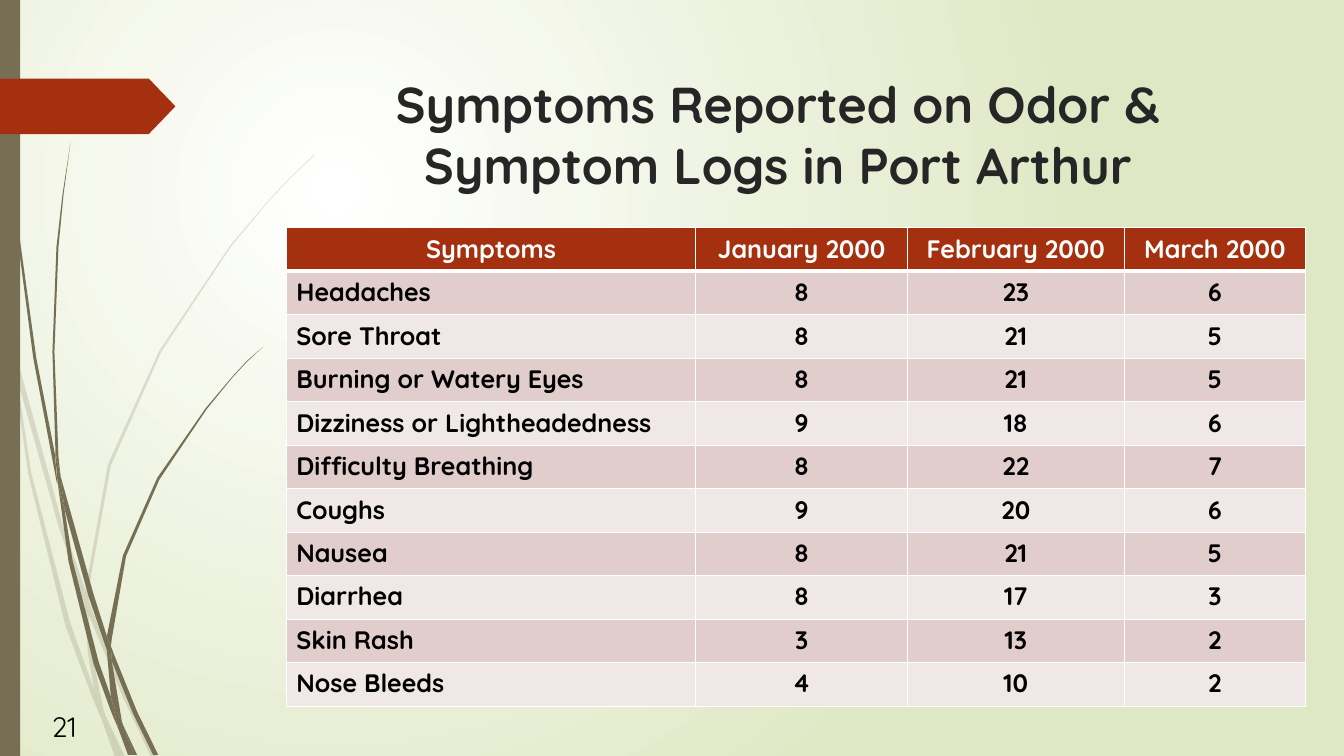
from lxml import etree
from pptx import Presentation
from pptx.dml.color import RGBColor
from pptx.enum.shapes import MSO_SHAPE
from pptx.enum.text import MSO_ANCHOR, PP_ALIGN
from pptx.oxml import parse_xml
from pptx.oxml.ns import nsdecls, qn
from pptx.util import Inches, Pt

RECTANGLE, PENTAGON = MSO_SHAPE.RECTANGLE, MSO_SHAPE.PENTAGON
TOP, MIDDLE = MSO_ANCHOR.TOP, MSO_ANCHOR.MIDDLE
LEFT, CENTER, RIGHT = PP_ALIGN.LEFT, PP_ALIGN.CENTER, PP_ALIGN.RIGHT

FONT = "Quicksand"
COLORS = {
    "glow": "FFFFFF", "meadow": "DFE8C4", "grass": "766F54", "accent": "A53010",
    "title": "262626", "text": "000000", "white": "FFFFFF",
    "band_dark": "E1CDCC", "band_light": "F0E8E7",
}

# Each blade section is an outline of (x, y) corners in inches.
PALE_GRASS = [
    [(.11, 3.5), (.09, 3.22), (0, 2.82), (0, 2.99), (.1, 3.44)],
    [(.58, 5.22), (.84, 5.99), (.85, 5.86), (.62, 5.2), (.14, 3.45), (.17, 3.76)],
    [(.92, 6.07), (.88, 5.96), (.88, 6.1), (1.23, 6.94), (1.5, 7.51), (1.55, 7.51),
     (1.27, 6.92)],
    [(1.19, 7.51), (1.24, 7.51), (1.05, 7.11)],
    [(.93, 6.83), (.7, 6.19), (.31, 4.69), (.17, 3.76), (.11, 3.5), (.28, 4.7),
     (.65, 6.21), (.92, 6.93), (1.01, 7.14), (.99, 7.07)],
    [(.84, 5.99), (.87, 6.46), (.93, 6.83), (.96, 6.92), (1.05, 7.11), (1.03, 7.06),
     (.91, 6.46), (.88, 6.1), (.88, 6.08)],
    [(.88, 5.84), (1.1, 4.62), (1.6, 3.49), (2.29, 2.45), (2.68, 1.98), (2.9, 1.75),
     (3.12, 1.54), (3.12, 1.53), (2.89, 1.75), (2.68, 1.97), (2.28, 2.44), (1.58, 3.48),
     (1.07, 4.61), (.85, 5.84), (.85, 5.86), (.88, 5.96)],
    [(1.01, 7.14), (1.14, 7.51), (1.19, 7.51)],
    [(.88, 6.08), (.88, 6.1), (.88, 5.96), (.85, 5.86), (.84, 5.99)],
    [(.96, 6.92), (.93, 6.83), (.99, 7.07), (1.01, 7.14), (1.19, 7.51), (1.05, 7.11)],
]
DARK_GRASS = [
    [(.07, 1.1), (.17, 2.33), (.33, 3.55), (.56, 4.77), (.57, 4.81), (.55, 4.57),
     (.55, 4.53), (.36, 3.55), (.19, 2.32), (.08, 1.09), (.05, .48), (.04, 0), (.03, 0),
     (.04, .48)],
    [(.88, 5.92), (1.06, 6.45), (1.06, 6.31), (.93, 5.9), (.6, 4.72), (.64, 5.05)],
    [(1.13, 6.49), (1.1, 6.41), (1.11, 6.56), (1.32, 7.08), (1.52, 7.49), (1.57, 7.49),
     (1.36, 7.06)],
    [(1.1, 6.91), (.98, 6.57), (.72, 5.56), (.64, 5.05), (.57, 4.77), (.68, 5.57),
     (.93, 6.59), (1.11, 7.08), (1.17, 7.22), (1.16, 7.17)],
    [(.6, 4.72), (.58, 4.53), (.54, 3.49), (.58, 2.45), (.63, 1.93), (.7, 1.41),
     (.62, 1.93), (.56, 2.45), (.52, 3.49), (.55, 4.49)],
    [(1.33, 7.49), (1.36, 7.49), (1.22, 7.19)],
    [(.57, 4.77), (.64, 5.05), (.6, 4.72), (.55, 4.49), (.55, 4.53)],
    [(1.11, 6.33), (1.25, 5.52), (1.58, 4.76), (2.05, 4.06), (2.31, 3.74), (2.45, 3.59),
     (2.61, 3.44), (2.45, 3.58), (2.31, 3.73), (2.04, 4.05), (1.56, 4.74), (1.22, 5.51),
     (1.06, 6.31), (1.1, 6.41)],
    [(1.17, 7.22), (1.27, 7.49), (1.31, 7.49)],
    [(1.06, 6.45), (1.1, 6.91), (1.16, 7.06), (1.22, 7.19), (1.21, 7.16), (1.11, 6.56),
     (1.09, 6.51)],
    [(1.06, 6.45), (1.09, 6.51), (1.11, 6.56), (1.1, 6.41), (1.06, 6.31)],
    [(1.16, 7.06), (1.1, 6.91), (1.16, 7.17), (1.17, 7.22), (1.3, 7.49), (1.33, 7.49),
     (1.22, 7.19)],
]

COLUMN_WIDTHS = [4.06, 2.1, 2.15, 1.8]
HEADINGS = ["Symptoms", "January 2000", "February 2000", "March 2000"]
REPORTS = [
    ("Headaches", 8, 23, 6),
    ("Sore Throat", 8, 21, 5),
    ("Burning or Watery Eyes", 8, 21, 5),
    ("Dizziness or Lightheadedness", 9, 18, 6),
    ("Difficulty Breathing", 8, 22, 7),
    ("Coughs", 9, 20, 6),
    ("Nausea", 8, 21, 5),
    ("Diarrhea", 8, 17, 3),
    ("Skin Rash", 3, 13, 2),
    ("Nose Bleeds", 4, 10, 2),
]


def rgb(name):
    return RGBColor.from_string(COLORS[name])


def paint(shape, color):
    shape.shadow.inherit = False
    shape.fill.solid()
    shape.fill.fore_color.rgb = rgb(color)
    shape.line.fill.background()


def write(frame, text, size, color, align, bold=False):
    frame.text = text
    para = frame.paragraphs[0]
    para.alignment = align
    font = para.runs[0].font
    font.name, font.size, font.bold = FONT, Pt(size), bold
    font.color.rgb = rgb(color)


def add_text(page, box, text, size, color, align, anchor, bold=False):
    frame = page.shapes.add_textbox(*map(Inches, box)).text_frame
    frame.word_wrap = True
    frame.vertical_anchor = anchor
    write(frame, text, size, color, align, bold)


def add_background(page):
    """Fill the page with a round glow centred in its upper left quarter."""
    stops = "".join(
        f'<a:gs pos="{position}"><a:srgbClr val="{COLORS[name]}"/></a:gs>'
        for position, name in ((0, "glow"), (100000, "meadow")))
    page.background.fill.solid()
    properties = page.element.cSld.find(qn("p:bg")).find(qn("p:bgPr"))
    properties.replace(properties[0], parse_xml(
        f'<a:gradFill {nsdecls("a")} rotWithShape="1"><a:gsLst>{stops}</a:gsLst>'
        '<a:path path="circle"><a:fillToRect l="50000" t="50000" r="100000" b="100000"/>'
        '</a:path></a:gradFill>'))


def add_grass(page, sections, opacity):
    group = page.shapes.add_group_shape()
    for section in sections:
        corners = [(Inches(x), Inches(y)) for x, y in section]
        builder = group.shapes.build_freeform(*corners[0])
        builder.add_line_segments(corners[1:], close=True)
        blade = builder.convert_to_shape()
        paint(blade, "grass")
        if opacity < 100:
            for color in blade.element.spPr.find(qn("a:solidFill")):
                etree.SubElement(color, qn("a:alpha"), val=str(opacity * 1000))


def add_side_decor(page, bar_box, arrow_box):
    add_grass(page, PALE_GRASS, 20)
    add_grass(page, DARK_GRASS, 100)
    paint(page.shapes.add_shape(RECTANGLE, *map(Inches, bar_box)), "grass")
    arrow = page.shapes.add_shape(PENTAGON, *map(Inches, arrow_box))
    arrow.adjustments[0] = 0.48
    paint(arrow, "accent")


def add_borders(cell, bottom_width):
    properties = cell._tc.get_or_add_tcPr()
    widths = {"lnL": 1, "lnR": 1, "lnT": 1, "lnB": bottom_width}
    for index, (side, width) in enumerate(widths.items()):
        properties.insert(index, parse_xml(
            f'<a:{side} {nsdecls("a")} w="{Pt(width)}"><a:solidFill>'
            f'<a:srgbClr val="{COLORS["white"]}"/></a:solidFill></a:{side}>'))


def add_symptom_table(page, box):
    rows = [HEADINGS, *REPORTS]
    table = page.shapes.add_table(len(rows), len(HEADINGS), *map(Inches, box)).table
    for column, width in zip(table.columns, COLUMN_WIDTHS):
        column.width = Inches(width)
    for row_index, values in enumerate(rows):
        is_header = row_index == 0
        band = "band_dark" if row_index % 2 else "band_light"
        for column_index, value in enumerate(values):
            cell = table.cell(row_index, column_index)
            cell.fill.solid()
            cell.fill.fore_color.rgb = rgb("accent" if is_header else band)
            align = CENTER if is_header or column_index else LEFT
            write(cell.text_frame, str(value), 18,
                  "white" if is_header else "text", align, bold=True)
            add_borders(cell, 3 if is_header else 1)


def main():
    deck = Presentation()
    deck.slide_width, deck.slide_height = Inches(13.33), Inches(7.5)
    page = deck.slides.add_slide(deck.slide_layouts[6])
    add_background(page)
    add_side_decor(page, (0, 0, 0.2, 7.5), (0, 0.78, 1.74, 0.55))
    add_text(page, (0.01, 7.01, 0.85, 0.4), "21", 20, "text", RIGHT, MIDDLE)
    add_text(page, (2.84, 0.68, 9.75, 1.4),
             "Symptoms Reported on Odor & Symptom Logs in Port Arthur",
             36, "title", CENTER, TOP, bold=True)
    add_symptom_table(page, (2.84, 2.26, 10.11, 4.75))
    deck.save("out.pptx")


if __name__ == "__main__":
    main()
